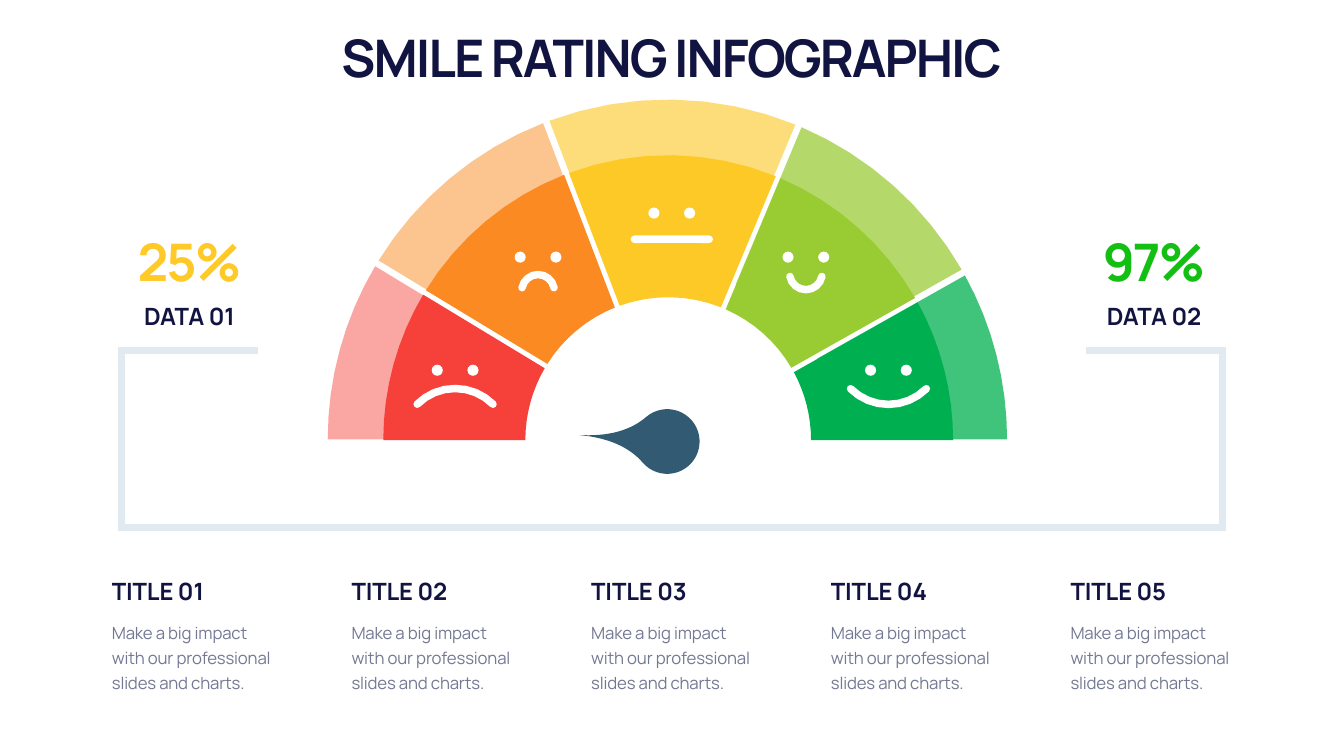
"""Build a slide with a five-step smile gauge, two figures and five captions."""
import math

import lxml.etree
import pptx
import pptx.dml.color
import pptx.enum.shapes
import pptx.enum.text
import pptx.oxml.ns
import pptx.util

Cm = pptx.util.Cm
Pt = pptx.util.Pt
RGBColor = pptx.dml.color.RGBColor
qn = pptx.oxml.ns.qn
ALIGN = pptx.enum.text.PP_ALIGN
ANCHOR = pptx.enum.text.MSO_ANCHOR

NAVY = RGBColor(0x11, 0x13, 0x40)
GREY = RGBColor(0x74, 0x79, 0x93)
FRAME = RGBColor(0xE0, 0xEA, 0xF0)
NEEDLE = RGBColor(0x32, 0x5B, 0x73)
WHITE = RGBColor(0xFF, 0xFF, 0xFF)
RED = RGBColor(0xF6, 0x41, 0x3A)
ORANGE = RGBColor(0xFA, 0x8A, 0x21)
YELLOW = RGBColor(0xFD, 0xC9, 0x27)
LIME = RGBColor(0x99, 0xCC, 0x33)
GREEN = RGBColor(0x00, 0xB0, 0x50)
GOLD_FIGURE = RGBColor(0xFF, 0xC9, 0x27)
GREEN_FIGURE = RGBColor(0x13, 0xBF, 0x13)

presentation = pptx.Presentation()
presentation.slide_width = Cm(33.87)
presentation.slide_height = Cm(19.05)
slide = presentation.slides.add_slide(presentation.slide_layouts[5])
shapes = slide.shapes


def write_text(text, left, top, width, height, box=None, size=17, color=NAVY, bold=True,
               align=ALIGN.CENTER, anchor=ANCHOR.TOP, tracking=-10, leading=None):
    if box is None:
        box = shapes.add_textbox(0, 0, 0, 0)
    box.left, box.top, box.width, box.height = Cm(left), Cm(top), Cm(width), Cm(height)
    frame = box.text_frame
    frame.text = text
    frame.word_wrap = True
    frame.auto_size = pptx.enum.text.MSO_AUTO_SIZE.SHAPE_TO_FIT_TEXT
    frame.vertical_anchor = anchor
    paragraph = frame.paragraphs[0]
    paragraph.alignment = align
    paragraph.line_spacing = leading
    font = paragraph.runs[0].font
    font.name, font.size, font.bold = "Manrope", Pt(size), bold
    font.color.rgb = color
    paragraph.runs[0]._r.get_or_add_rPr().set("spc", str(tracking))


def arc(x, y, radius, start, end, steps=8):
    angles = [math.radians(start + (end - start) * i / steps) for i in range(steps + 1)]
    return [(Cm(x + radius * math.cos(a)), Cm(y - radius * math.sin(a))) for a in angles]


write_text("SMILE RATING INFOGRAPHIC", 2.11, 0.51, 29.64, 1.83, box=shapes.title,
           size=37, anchor=ANCHOR.BOTTOM, tracking=-140)

drawings = []
moods = [(RED, 46), (ORANGE, 50), (YELLOW, 62), (LIME, 73), (GREEN, 75)]
bounds = [180, 148.8, 110.9, 67.3, 29.4, 0]
rings = [(16.82, 11.07, 8.56, 4.28, 0.17, True), (16.84, 11.09, 7.18, 3.6, 0.13, False)]
for x, y, outer, inner, gap, pale in rings:
    for step, (color, opacity) in enumerate(moods):
        edges = []
        for radius in (outer, inner):
            trim = math.degrees(math.asin(gap / 2 / radius))
            start = bounds[step] - (trim if step > 0 else 0)
            end = bounds[step + 1] + (trim if step < len(moods) - 1 else 0)
            edges.append(arc(x, y, radius, start, end))
        drawings.append((edges[0] + edges[1][::-1], color, opacity if pale else 100))

FROWN, SMILE = 90, 270
HALF_LIP, EYE = 0.095, 0.14
faces = [
    (11.47, 9.33, 9.79, FROWN, 1.35, 45),
    (13.56, 6.48, 6.92, FROWN, 0.41, 79),
    (16.93, 5.37, 6.03, FROWN, 1000, 0.054),
    (20.31, 6.48, 7.3, SMILE, 0.41, 79),
    (22.39, 9.33, 10.19, SMILE, 1.35, 45),
]
marks = []
for x, eye_y, lip_y, facing, radius, spread in faces:
    center_y = lip_y + radius * math.sin(math.radians(facing))
    first, last = facing - spread, facing + spread
    caps = []
    for angle, turn in ((last, 0), (first, 180)):
        theta = math.radians(angle)
        caps.append(arc(x + radius * math.cos(theta), center_y - radius * math.sin(theta),
                        HALF_LIP, angle + turn, angle + turn + 180, steps=4))
    mouth = (arc(x, center_y, radius + HALF_LIP, first, last) + caps[0][1:-1]
             + arc(x, center_y, radius - HALF_LIP, last, first) + caps[1][1:-1])
    drawings.append((mouth, WHITE, 100))
    for side in (-1, 1):
        eye = shapes.add_shape(pptx.enum.shapes.MSO_SHAPE.OVAL, Cm(x + side * 0.45 - EYE),
                               Cm(eye_y - EYE), Cm(2 * EYE), Cm(2 * EYE))
        marks.append((eye, WHITE))

needle = shapes.add_shape(pptx.enum.shapes.MSO_SHAPE.TEAR, Cm(16), Cm(10.31), Cm(1.63), Cm(1.63))
needle.adjustments[0] = 1.933
needle.rotation = 229.2
marks.append((needle, NEEDLE))

for points, color, opacity in drawings:
    builder = shapes.build_freeform(*points[0])
    builder.add_line_segments(points[1:])
    outline = builder.convert_to_shape()
    outline.fill.solid()
    outline.fill.fore_color.rgb = color
    if opacity < 100:
        tint = outline._element.spPr.find(".//" + qn("a:srgbClr"))
        lxml.etree.SubElement(tint, qn("a:alpha")).set("val", str(opacity * 1000))
    outline.line.fill.background()
    outline.shadow.inherit = False

for mark, color in marks:
    shapes._spTree.append(mark._element)
    mark.fill.solid()
    mark.fill.fore_color.rgb = color
    mark.line.fill.background()
    mark.shadow.inherit = False

corners = [(27.36, 8.84), (30.81, 8.84), (30.81, 13.29), (3.07, 13.29), (3.07, 8.84), (6.5, 8.84)]
corners = [(Cm(x), Cm(y)) for x, y in corners]
builder = shapes.build_freeform(*corners[0])
builder.add_line_segments(corners[1:], close=False)
bracket = builder.convert_to_shape()
bracket.shadow.inherit = False
bracket.fill.background()
bracket.line.color.rgb = FRAME
bracket.line.width = Pt(5)
miter = lxml.etree.SubElement(bracket._element.spPr.find(qn("a:ln")), qn("a:miter"))
miter.set("lim", "800000")

figures = [("25%", "DATA 01", 2.11, GOLD_FIGURE), ("97%", "DATA 02", 26.42, GREEN_FIGURE)]
for figure, label, left, color in figures:
    write_text(label, left, 7.47, 5.33, 0.99)
    write_text(figure, left, 5.66, 5.33, 1.83, size=37, color=color,
               anchor=ANCHOR.BOTTOM, tracking=-140)

for column in range(5):
    left = 2.57 + column * 6.04
    write_text(f"TITLE {column + 1:02d}", left, 14.4, 4.62, 0.99,
               align=ALIGN.LEFT, anchor=ANCHOR.BOTTOM)
    write_text("Make a big impact with our professional slides and charts.",
               left, 15.44, 4.62, 2.79, size=12, color=GREY, bold=False,
               align=ALIGN.LEFT, leading=Pt(18))

presentation.save("out.pptx")
